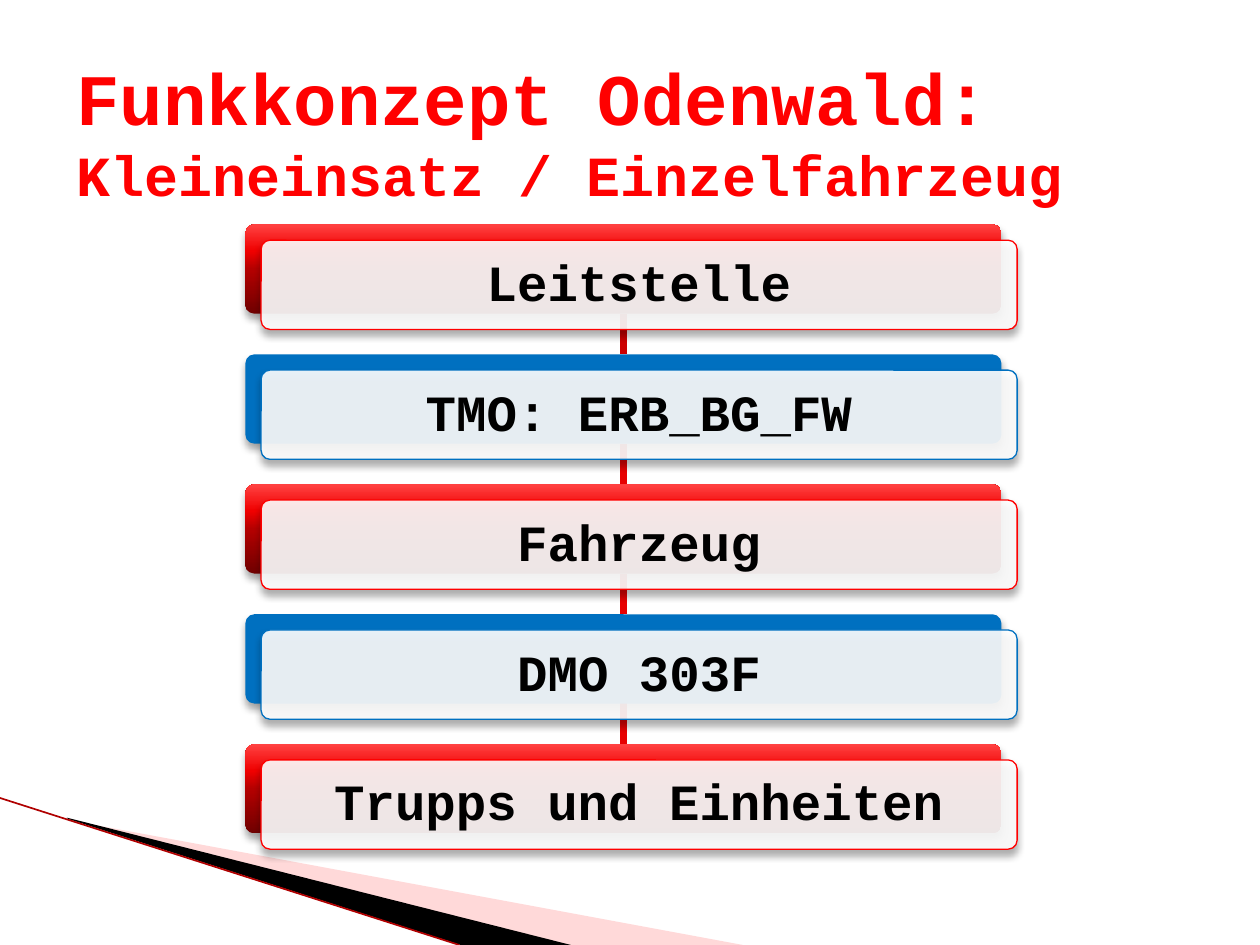
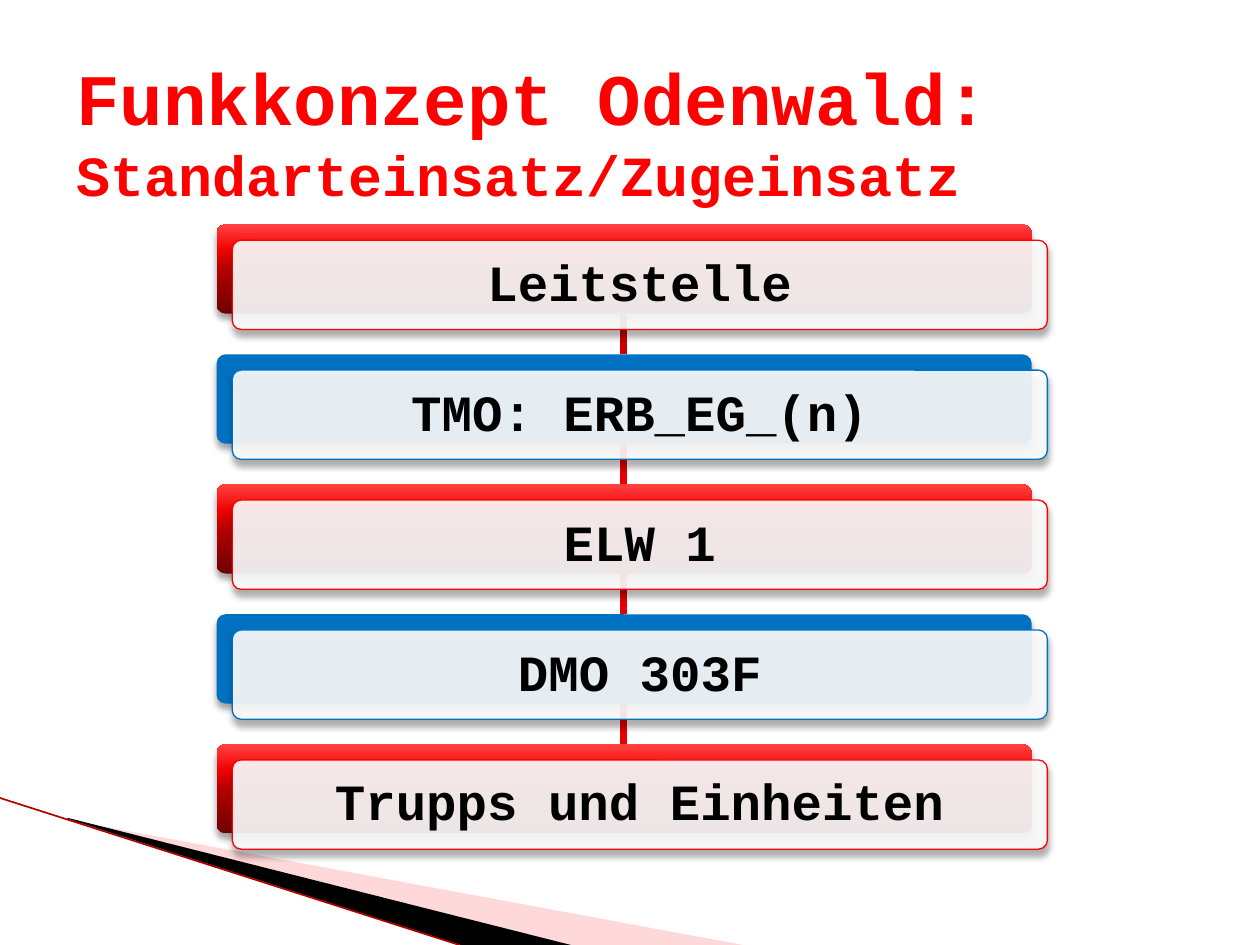
import dataclasses
import lxml.etree
import pptx
import pptx.dml.color
import pptx.enum.shapes
import pptx.enum.text
import pptx.oxml.ns
import pptx.util

PX = 9525
qn = pptx.oxml.ns.qn
Pt = pptx.util.Pt
rgb = pptx.dml.color.RGBColor.from_string
sub = lxml.etree.SubElement
kinds = pptx.enum.shapes


@dataclasses.dataclass(frozen=True)
class Theme:
    font: str = "Courier New"
    red: str = "FF0000"
    blue: str = "0070C0"
    black: str = "000000"
    white: str = "FFFFFF"
    pink: str = "FFA2A2"
    rule: str = "B00000"
    stem: str = "E70000"
    dark: str = "CC0000"
    blend: tuple = ((0, "700000"), (50, "B40000"), (70, "F00000"), (100, "FF4242"))
    head: float = 41.4
    subhead: float = 32.4
    label: int = 29


theme = Theme()


def paint(shape, fill, alpha=100, line=None, shade=False):
    shape.shadow.inherit = False
    props = shape._element.spPr
    if fill == theme.red:
        shape.fill.gradient()
        shape.fill.gradient_angle = 90
        stops = props.find(".//" + qn("a:gsLst"))
        stops.clear()
        for pos, tone in theme.blend:
            stop = sub(stops, qn("a:gs"), pos=str(pos * 1000))
            sub(stop, qn("a:srgbClr"), val=tone)
    else:
        shape.fill.solid()
        shape.fill.fore_color.rgb = rgb(fill)
        if alpha < 100:
            tone = props.find(qn("a:solidFill")).find(qn("a:srgbClr"))
            sub(tone, qn("a:alpha"), val=str(alpha * 1000))
    if line:
        shape.line.color.rgb = rgb(line)
        shape.line.width = Pt(0.75)
    else:
        shape.line.fill.background()
    if shade:
        drop = sub(props.find(qn("a:effectLst")), qn("a:outerShdw"), blurRad=str(Pt(4)),
                   dist=str(Pt(3)), dir="5400000", algn="ctr", rotWithShape="0")
        tone = sub(drop, qn("a:srgbClr"), val=theme.black)
        sub(tone, qn("a:alpha"), val="35000")


def write(text, page, box, sizes, color, align="LEFT", pad=(10, 5), space=1.0, shade=False):
    frame = page.shapes.add_textbox(*[n * PX for n in box]).text_frame
    frame.word_wrap = True
    frame.vertical_anchor = pptx.enum.text.MSO_ANCHOR.MIDDLE
    frame.margin_left = frame.margin_right = pad[0] * PX
    frame.margin_top = frame.margin_bottom = pad[1] * PX
    para = frame.paragraphs[0]
    para.alignment = pptx.enum.text.PP_ALIGN[align]
    para.line_spacing = space
    for i, (part, size) in enumerate(zip(text.split("\n"), sizes)):
        if i:
            para.add_line_break()
        run = para.add_run()
        run.text = part
        run.font.name = theme.font
        run.font.size = Pt(size)
        run.font.bold = True
        run.font.color.rgb = rgb(color)
        if shade:
            fill = run._r.rPr.find(qn("a:solidFill"))
            glow = lxml.etree.Element(qn("a:effectLst"))
            fill.addnext(glow)
            drop = sub(glow, qn("a:outerShdw"), blurRad=str(Pt(4)), dist=str(Pt(4)),
                       dir="2700000", algn="tl", rotWithShape="0")
            tone = sub(drop, qn("a:srgbClr"), val=theme.black)
            sub(tone, qn("a:alpha"), val="45000")


wedges = [
    (theme.pink, 40, [(53, 625), (566, 720), (434, 720), (53, 624)]),
    (theme.black, 100, [(51, 623), (435, 720), (351, 720), (52, 624)]),
]
decks = [
    ("Kleineinsatz / Einzelfahrzeug", 187, 576,
     ["Leitstelle", "TMO: ERB_BG_FW", "Fahrzeug", "DMO 303F", "Trupps und Einheiten"]),
    ("Standarteinsatz/Zugeinsatz", 165, 621,
     ["Leitstelle", "TMO: ERB_EG_(n)", "ELW 1", "DMO 303F", "Trupps und Einheiten"]),
]
top, high, pitch, shift, axis = 171, 68, 99, 12, 475

deck = pptx.Presentation()
deck.slide_width = 960 * PX
deck.slide_height = 720 * PX

for title, left, wide, steps in decks:
    page = deck.slides.add_slide(deck.slide_layouts[6])

    for color, alpha, points in wedges:
        form = page.shapes.build_freeform(*points[0], scale=PX)
        form.add_line_segments(points[1:], close=True)
        paint(form.convert_to_shape(), color, alpha)

    lines = [((0, 608, 350, 720), theme.rule, 0.95)]
    for i in range(len(steps) - 1):
        y = top + i * pitch
        tone = theme.stem if i else theme.dark
        lines.append(((axis, y + high, axis, y + pitch), tone, 4.33))
    for ends, color, width in lines:
        stroke = page.shapes.add_connector(
            kinds.MSO_CONNECTOR.STRAIGHT, *[n * PX for n in ends])
        stroke.line.color.rgb = rgb(color)
        stroke.line.width = Pt(width)
        sub(stroke._element.spPr, qn("a:effectLst"))

    for i, step in enumerate(steps):
        y = top + i * pitch
        color = theme.blue if i % 2 else theme.red
        layers = [(0, color, 100, None), (shift, theme.white, 90, color)]
        for move, fill, alpha, line in layers:
            box = (left + move, y + move, wide, high)
            card = page.shapes.add_shape(
                kinds.MSO_SHAPE.ROUNDED_RECTANGLE, *[n * PX for n in box])
            card.adjustments[0] = 0.1
            paint(card, fill, alpha, line, shade=True)
        write(step, page, (left + shift + 2, y + shift + 2, wide - 4, high - 4),
              [theme.label], theme.black, align="CENTER", pad=(11, 11), space=0.9)

    write("Funkkonzept Odenwald:\n" + title, page, (48, 50, 864, 99),
          [theme.head, theme.subhead], theme.red, shade=True)

deck.save("out.pptx")
